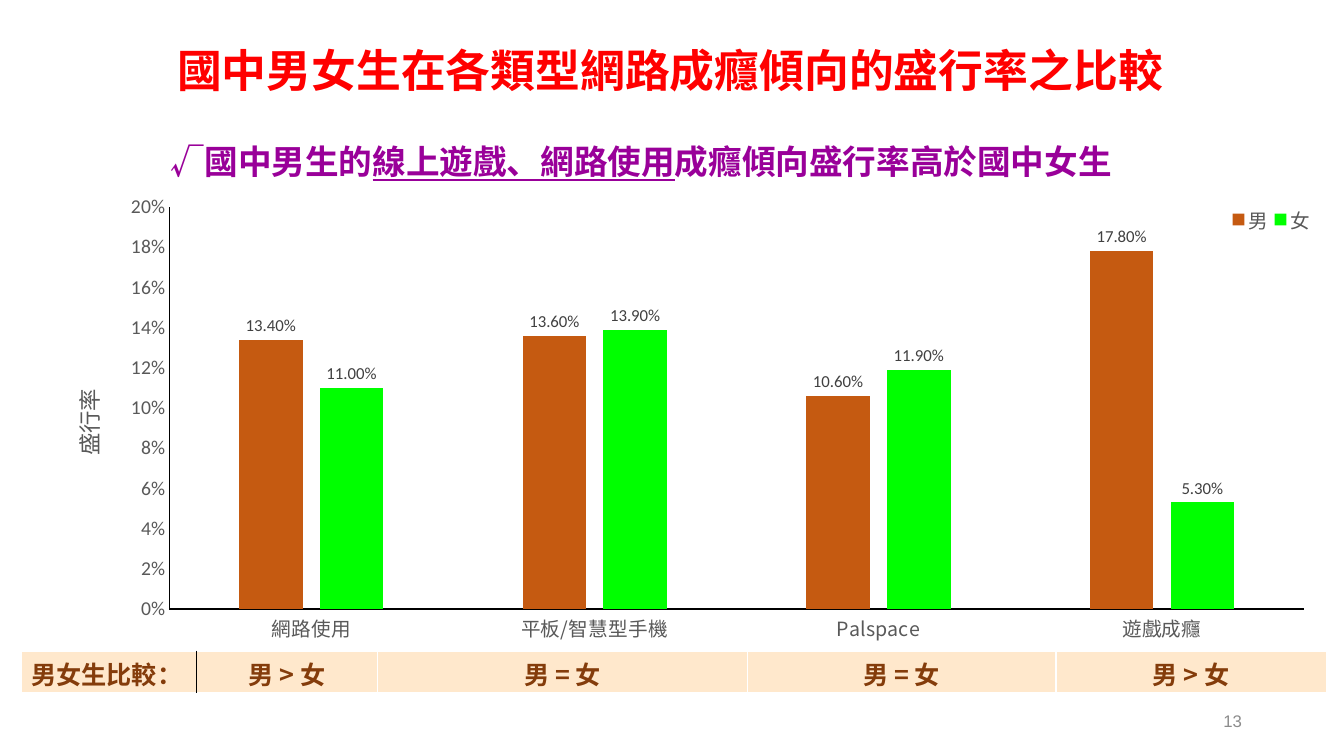
from dataclasses import dataclass
from typing import Any

from lxml import etree
from pptx import Presentation
from pptx.chart.data import CategoryChartData
from pptx.dml.color import RGBColor
from pptx.enum.chart import XL_CHART_TYPE, XL_LABEL_POSITION, XL_LEGEND_POSITION, XL_TICK_MARK
from pptx.enum.text import MSO_ANCHOR, MSO_AUTO_SIZE, PP_ALIGN
from pptx.oxml.ns import qn
from pptx.util import Cm, Pt

LEFT, CENTER, RIGHT = PP_ALIGN.LEFT, PP_ALIGN.CENTER, PP_ALIGN.RIGHT
MIDDLE = MSO_ANCHOR.MIDDLE
NONE, GROW = MSO_AUTO_SIZE.NONE, MSO_AUTO_SIZE.SHAPE_TO_FIT_TEXT
COLUMN = XL_CHART_TYPE.COLUMN_CLUSTERED
OUTSIDE = XL_LABEL_POSITION.OUTSIDE_END
BOTTOM = XL_LEGEND_POSITION.BOTTOM
NO_TICK = XL_TICK_MARK.NONE

CJK, SANS, NUM = "Noto Sans CJK SC", "Calibri", "Arial"
HEX = {
    "title": "FF0000", "claim": "990099", "male": "C55A11", "female": "00FF00",
    "axis": "595959", "label": "404040", "black": "000000", "white": "FFFFFF",
    "cell": "FFE8CC", "brown": "843C0B", "page": "8C8C8C",
}


@dataclass
class Style:
    size: float
    color: str
    name: str = CJK
    bold: bool = False


@dataclass
class Group:
    name: str
    color: str
    rates: tuple[float, ...]


@dataclass
class Verdict:
    text: str
    width: float
    align: Any = CENTER


TITLE = Style(32, "title", bold=True)
CLAIM = Style(24, "claim", bold=True)
CELL = Style(18, "brown", bold=True)
PAGE = Style(12, "page", NUM)
AXIS = Style(14, "axis", SANS)
CATS = Style(14, "axis")
HEAD = Style(16, "axis")
LABEL = Style(12, "label", SANS)

TOPICS = ["網路使用", "平板/智慧型手機", "Palspace", "遊戲成癮"]
GROUPS = [
    Group("男", "male", (0.134, 0.136, 0.106, 0.178)),
    Group("女", "female", (0.11, 0.139, 0.119, 0.053)),
]
VERDICTS = [
    Verdict("男女生比較：", 4.42, LEFT),
    Verdict("男 > 女", 4.57),
    Verdict("男 = 女", 9.32),
    Verdict("男 = 女", 7.77),
    Verdict("男 > 女", 6.81),
]
CLAIMS = [("√國中男生的", False), ("線上遊戲、網路使用", True), ("成癮傾向盛行率高於國中女生", False)]


def rgb(key: str) -> RGBColor:
    return RGBColor.from_string(HEX[key])


def assign(item: Any, **values: Any) -> None:
    for key, value in values.items():
        setattr(item, key, value)


def dress(font: Any, style: Style) -> None:
    """Apply a style, for Latin and East Asian letters alike."""
    assign(font, size=Pt(style.size), bold=style.bold, name=style.name)
    font.color.rgb = rgb(style.color)
    etree.SubElement(font._rPr, qn("a:ea"), typeface=CJK)


def write(para: Any, text: str, style: Style, line: bool = False) -> None:
    run = para.add_run()
    run.text = text
    run.font.underline = line
    dress(run.font, style)


def place(node: Any, index: int, **fracs: float) -> None:
    """Fix a chart part at fractions of the chart area."""
    for old in node.findall(qn("c:layout")):
        node.remove(old)
    layout = etree.Element(qn("c:layout"))
    node.insert(index, layout)
    manual = etree.SubElement(layout, qn("c:manualLayout"))
    if index == 0:
        etree.SubElement(manual, qn("c:layoutTarget"), val="inner")
    for key in ("x", "y"):
        etree.SubElement(manual, qn(f"c:{key}Mode"), val="edge")
    for key, value in fracs.items():
        etree.SubElement(manual, qn(f"c:{key}"), val=str(value))


def edge(cell: Any, colors: dict[str, str]) -> None:
    """Draw the cell borders, keyed by side."""
    props = cell._tc.get_or_add_tcPr()
    for index, (side, color) in enumerate(colors.items()):
        line = etree.Element(qn(f"a:ln{side}"), w=str(Pt(1)))
        fill = etree.SubElement(line, qn("a:solidFill"))
        etree.SubElement(fill, qn("a:srgbClr"), val=HEX[color])
        props.insert(index, line)


def add_title(slide: Any) -> None:
    title = slide.shapes.title
    assign(title, left=Cm(2.29), top=Cm(0), width=Cm(29.21), height=Cm(3.68))
    assign(title.text_frame, auto_size=NONE, vertical_anchor=MIDDLE, word_wrap=True)
    para = title.text_frame.paragraphs[0]
    assign(para, alignment=CENTER, line_spacing=0.9)
    write(para, "國中男女生在各類型網路成癮傾向的盛行率之比較", TITLE)


def add_chart(slide: Any) -> None:
    data = CategoryChartData(number_format="0.00%")
    data.categories = TOPICS
    for group in GROUPS:
        data.add_series(group.name, group.rates)
    frame = slide.shapes.add_chart(COLUMN, Cm(1.02), Cm(4.7), Cm(32.49), Cm(12.83), data)
    chart = frame.chart
    assign(chart, has_title=False, has_legend=True)
    dress(chart.font, Style(10, "black", SANS))

    plot = chart.plots[0]
    assign(plot, gap_width=219, overlap=-27, vary_by_categories=False)
    for series, group in zip(plot.series, GROUPS):
        series.format.fill.solid()
        series.format.fill.fore_color.rgb = rgb(group.color)
        labels = series.data_labels
        assign(labels, show_value=True, position=OUTSIDE,
               number_format="0.00%", number_format_is_linked=False)
        dress(labels.font, LABEL)

    rate = chart.value_axis
    assign(rate, minimum_scale=0, maximum_scale=0.2, major_unit=0.02)
    assign(rate.tick_labels, number_format="0%", number_format_is_linked=False)
    for axis, style in ((chart.category_axis, CATS), (rate, AXIS)):
        assign(axis, has_major_gridlines=False, major_tick_mark=NO_TICK, minor_tick_mark=NO_TICK)
        dress(axis.tick_labels.font, style)
        axis.format.line.width = Pt(0.75)
        axis.format.line.color.rgb = rgb("black")
    head = rate.axis_title
    write(head.text_frame.paragraphs[0], "盛行率", HEAD)

    legend = chart.legend
    assign(legend, position=BOTTOM, include_in_layout=False)
    dress(legend.font, AXIS)
    place(chart._chartSpace.chart.plotArea, 0, x=0.1, y=0.04, w=0.88, h=0.79)
    place(head._element, 1, x=0.02, y=0.39)
    place(legend._element, 1, x=0.92, y=0.03, w=0.07, h=0.07)


def add_claim(slide: Any) -> None:
    box = slide.shapes.add_textbox(Cm(4.06), Cm(3.43), Cm(25.04), Cm(1.27))
    assign(box.text_frame, word_wrap=False, auto_size=GROW)
    for text, line in CLAIMS:
        write(box.text_frame.paragraphs[0], text, CLAIM, line)


def add_table(slide: Any) -> None:
    width = Cm(sum(item.width for item in VERDICTS))
    frame = slide.shapes.add_table(1, len(VERDICTS), Cm(0.53), Cm(16.41), width, Cm(1.04))
    table = frame.table
    assign(table, first_row=False, horz_banding=False)
    for col, item in enumerate(VERDICTS):
        table.columns[col].width = Cm(item.width)
        cell = table.cell(0, col)
        assign(cell, margin_top=Cm(0.1), margin_bottom=Cm(0))
        cell.fill.solid()
        cell.fill.fore_color.rgb = rgb("cell")
        edge(cell, {"L": "black" if col == 1 else "white",
                    "R": "black" if col == 0 else "white", "T": "white", "B": "white"})
        para = cell.text_frame.paragraphs[0]
        para.alignment = item.align
        write(para, item.text, CELL)


def add_page(slide: Any) -> None:
    box = slide.shapes.add_textbox(Cm(23.93), Cm(17.65), Cm(7.62), Cm(1.02))
    assign(box.text_frame, word_wrap=True, vertical_anchor=MIDDLE)
    para = box.text_frame.paragraphs[0]
    para.alignment = RIGHT
    write(para, "13", PAGE)


def main() -> None:
    deck = Presentation()
    assign(deck, slide_width=Cm(33.87), slide_height=Cm(19.05))
    slide = deck.slides.add_slide(deck.slide_layouts[5])
    for draw in (add_title, add_chart, add_claim, add_table, add_page):
        draw(slide)
    deck.save("out.pptx")


if __name__ == "__main__":
    main()
